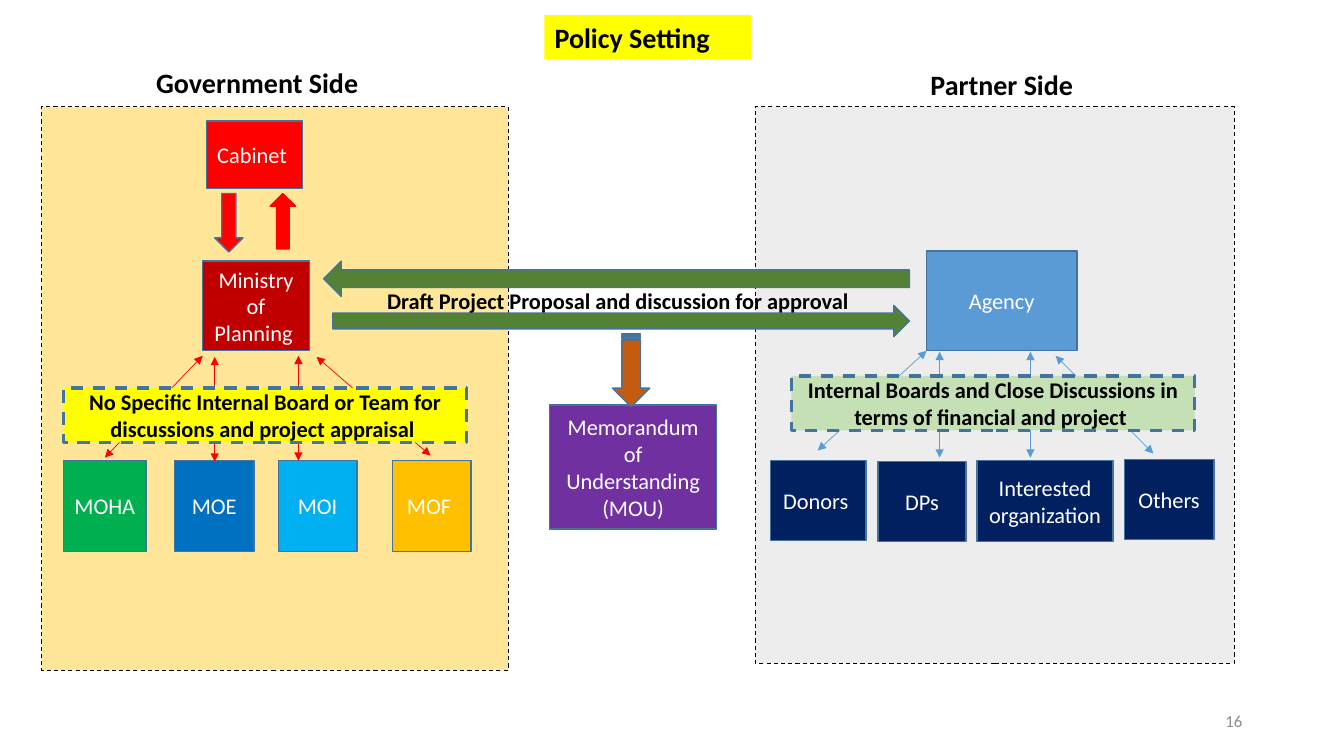
from pptx import Presentation
from pptx.dml.color import RGBColor
from pptx.enum.dml import MSO_LINE
from pptx.enum.shapes import MSO_CONNECTOR, MSO_SHAPE as SHAPE
from pptx.enum.text import MSO_ANCHOR as ANCHOR, MSO_AUTO_SIZE, PP_ALIGN as ALIGN
from pptx.util import Pt
from lxml import etree

PX = 9144  # EMU per px, 100 px to the inch
A = "{http://schemas.openxmlformats.org/drawingml/2006/main}"
BORDER = "43739E"
NAVY = "002060"
RED = "FF0000"
BLUE = "5B9BD5"
GREEN = "548235"
YELLOW = "FFFF00"


def add_shape(kind, box, fill, line=BORDER, width=1, dash=None):
    shape = slide.shapes.add_shape(kind, *[value * PX for value in box])
    shape.shadow.inherit = False
    shape.fill.solid()
    shape.fill.fore_color.rgb = RGBColor.from_string(fill)
    shape.line.color.rgb = RGBColor.from_string(line)
    shape.line.width = Pt(width)
    shape.line.dash_style = dash
    return shape


def write(shape, text, size=16, color="FFFFFF", bold=False, align=ALIGN.CENTER, anchor=ANCHOR.MIDDLE):
    frame = shape.text_frame
    frame.text = text
    frame.word_wrap = True
    frame.auto_size = MSO_AUTO_SIZE.NONE
    frame.vertical_anchor = anchor
    paragraph = frame.paragraphs[0]
    paragraph.alignment = align
    font = paragraph.runs[0].font
    font.name = "Calibri"
    font.size = Pt(size)
    font.bold = bold
    font.color.rgb = RGBColor.from_string(color)


presentation = Presentation()
presentation.slide_width = 1333 * PX
presentation.slide_height = 750 * PX
slide = presentation.slides.add_slide(presentation.slide_layouts[5])

# Title
title = slide.shapes.title
title.left, title.top, title.width, title.height = [value * PX for value in (540, 15, 205, 44)]
title.fill.solid()
title.fill.fore_color.rgb = RGBColor.from_string(YELLOW)
write(title, "Policy Setting", 20, "000000", True, ALIGN.LEFT, ANCHOR.TOP)

# Side panels
for box, fill in [((749, 106, 475, 552), "EDEDED"), ((41, 106, 463, 559), "FFE699")]:
    add_shape(SHAPE.RECTANGLE, box, fill, "000000", 0.75, MSO_LINE.DASH)

# Organizations and the memorandum
organizations = [
    ("Ministry of Planning ", (201, 259, 106, 89), "C00000"),
    ("MOHA", (63, 457, 82, 90), "00B050"),
    ("MOE", (173, 457, 79, 90), "0070C0"),
    ("MOI", (276, 457, 78, 90), "00B0F0"),
    ("MOF ", (389, 457, 78, 90), "FFC000"),
    ("Cabinet ", (205, 120, 95, 67), RED),
    ("Agency", (919, 249, 149, 99), BLUE),
    ("Donors ", (764, 457, 95, 79), NAVY),
    ("DPs", (871, 458, 87, 79), NAVY),
    ("Interested organization ", (969, 457, 135, 80), NAVY),
    ("Others", (1115, 456, 89, 79), NAVY),
    ("Memorandum of Understanding (MOU)", (545, 402, 166, 123), "7030A0"),
]
for name, box, fill in organizations:
    write(add_shape(SHAPE.RECTANGLE, box, fill), name)

# Block arrows
add_shape(SHAPE.LEFT_ARROW, (321, 259, 581, 35), GREEN)
add_shape(SHAPE.UP_ARROW, (268, 192, 25, 55), RED, RED)
add_shape(SHAPE.DOWN_ARROW, (213, 192, 28, 58), RED)
add_shape(SHAPE.RIGHT_ARROW, (330, 303, 572, 31), GREEN)
memorandum_arrow = add_shape(SHAPE.STRIPED_RIGHT_ARROW, (590, 349, 72, 37), "C55A11")
memorandum_arrow.rotation = 90

# Two-headed links
links = {
    BLUE: [(919, 348, 811, 447), (1022, 349, 1022, 454), (1047, 353, 1144, 450), (932, 349, 932, 454)],
    RED: [(213, 354, 213, 458), (296, 353, 296, 457), (201, 353, 104, 454), (314, 354, 427, 452)],
}
for color, routes in links.items():
    for route in routes:
        link = slide.shapes.add_connector(MSO_CONNECTOR.STRAIGHT, *[value * PX for value in route])
        link.line.color.rgb = RGBColor.from_string(color)
        link.line.width = Pt(0.5)
        line = link.line._get_or_add_ln()
        for end in ("headEnd", "tailEnd"):
            etree.SubElement(line, A + end, type="triangle")
        etree.SubElement(link._element.spPr, A + "effectLst")

# Labels
labels = [
    ("Government Side", (145, 60, 246, 44), 20, "000000", True, ALIGN.LEFT, ANCHOR.TOP),
    ("Partner Side", (913, 62, 246, 44), 20, "000000", True, ALIGN.LEFT, ANCHOR.TOP),
    ("Draft Project Proposal and discussion for approval ", (363, 271, 505, 54),
     16, "000000", True, ALIGN.CENTER, ANCHOR.MIDDLE),
    ("16", (942, 695, 300, 40), 12, "8C8C8C", False, ALIGN.RIGHT, ANCHOR.MIDDLE),
]
for text, box, *style in labels:
    write(slide.shapes.add_textbox(*[value * PX for value in box]), text, *style)

# Discussion boards
boards = [
    ("Internal Boards and Close Discussions in terms of financial and project ", (785, 373, 400, 54), "C5E0B4"),
    ("No Specific Internal Board or Team for discussions and project appraisal ", (63, 385, 400, 54), YELLOW),
]
for text, box, fill in boards:
    board = add_shape(SHAPE.RECTANGLE, box, fill, width=2.25, dash=MSO_LINE.DASH)
    write(board, text, color="000000", bold=True)

presentation.save("out.pptx")
